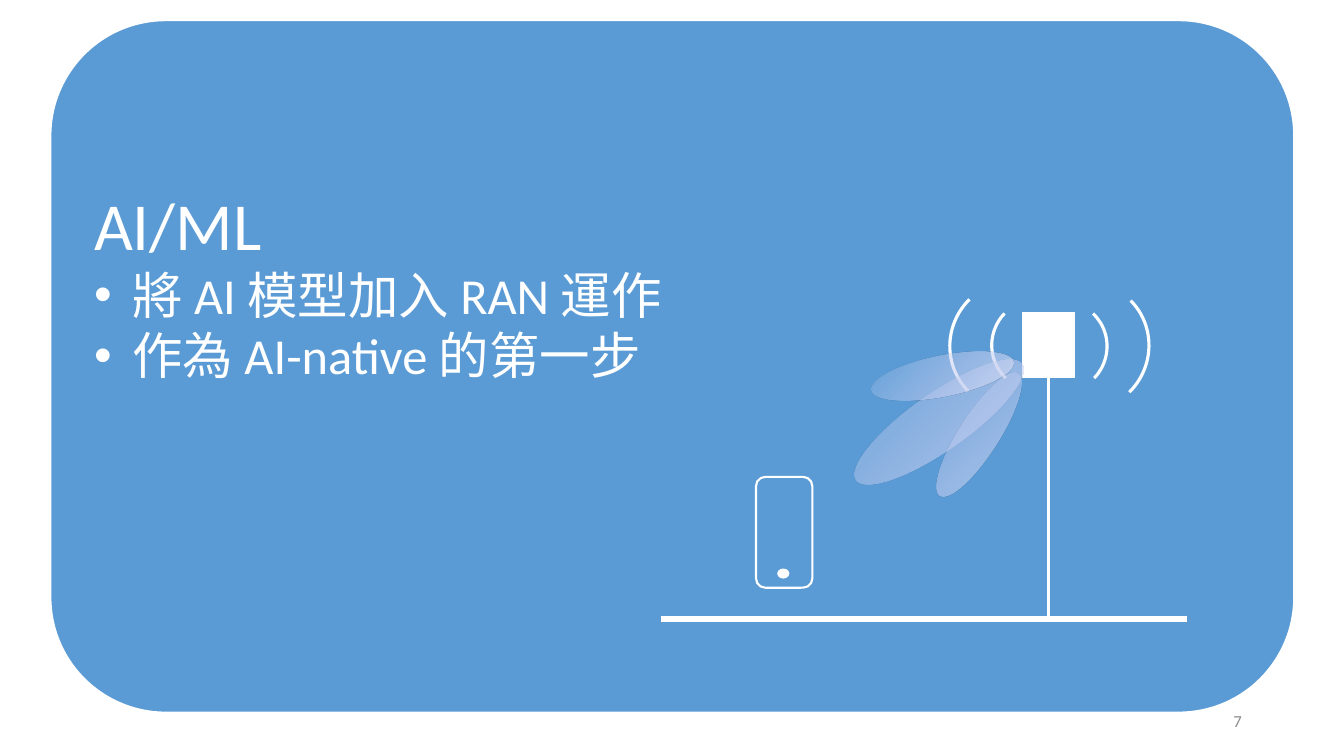
from lxml import etree
from pptx import Presentation
from pptx.dml.color import RGBColor
from pptx.enum.shapes import MSO_CONNECTOR as Connector, MSO_SHAPE as Preset
from pptx.enum.text import MSO_ANCHOR as Anchor, PP_ALIGN as Align
from pptx.oxml.ns import qn
from pptx.util import Inches, Pt

COLORS = {"panel": "5B9BD5", "white": "FFFFFF", "number": "8C8C8C"}
# position, colour and opacity, all positions and opacities in percent
BEAM_STOPS = [(0, "E0E5F7", 72), (47, "C0CBF0", 55), (98, "D0D8F4", 0)]


class Canvas:
    """Draws on one slide; lengths are percentages of its width and height."""

    font = "Calibri"

    def __init__(self, presentation):
        self.width = presentation.slide_width
        self.height = presentation.slide_height
        self.slide = presentation.slides.add_slide(presentation.slide_layouts[6])

    def x(self, share):
        return round(self.width * share / 100)

    def y(self, share):
        return round(self.height * share / 100)

    def box(self, left, top, width, height):
        return self.x(left), self.y(top), self.x(width), self.y(height)

    def shape(self, preset, box, fill=None, line_width=0, rotation=0):
        shape = self.slide.shapes.add_shape(preset, *self.box(*box))
        shape.shadow.inherit = False
        shape.rotation = rotation
        if fill:
            shape.fill.solid()
            shape.fill.fore_color.rgb = RGBColor.from_string(COLORS[fill])
        if line_width:
            shape.line.color.rgb = RGBColor.from_string(COLORS["white"])
            shape.line.width = Pt(line_width)
        else:
            shape.line.fill.background()
        return shape

    def line(self, start, end, width):
        line = self.slide.shapes.add_connector(
            Connector.STRAIGHT, self.x(start[0]), self.y(start[1]), self.x(end[0]), self.y(end[1]))
        line.line.color.rgb = RGBColor.from_string(COLORS["white"])
        line.line.width = Pt(width)
        etree.SubElement(line._element.spPr, qn("a:effectLst"))

    def text_box(self, box):
        frame = self.slide.shapes.add_textbox(*self.box(*box)).text_frame
        frame.word_wrap = True
        frame.vertical_anchor = Anchor.MIDDLE
        return frame

    def run(self, paragraph, text, size, color="white", align=Align.LEFT):
        paragraph.alignment = align
        run = paragraph.add_run()
        run.text = text
        run.font.name = self.font
        run.font.size = Pt(size)
        run.font.color.rgb = RGBColor.from_string(COLORS[color])

    def bullet(self, paragraph, text, size):
        self.run(paragraph, text, size)
        properties = paragraph._p.get_or_add_pPr()
        indent = Inches(0.38)
        properties.set("marL", str(indent))
        properties.set("indent", str(-indent))
        etree.SubElement(properties, qn("a:buFont"), typeface="Arial")
        etree.SubElement(properties, qn("a:buChar"), char="•")

    def beam(self, box, rotation):
        """Add an ellipse that fades out from its lower right corner."""
        shape = self.shape(Preset.OVAL, box, rotation=rotation)
        gradient = etree.Element(qn("a:gradFill"), rotWithShape="1")
        stops = etree.SubElement(gradient, qn("a:gsLst"))
        for position, color, opacity in BEAM_STOPS:
            stop = etree.SubElement(stops, qn("a:gs"), pos=str(position * 1000))
            rgb = etree.SubElement(stop, qn("a:srgbClr"), val=color)
            etree.SubElement(rgb, qn("a:alpha"), val=str(opacity * 1000))
        circle = etree.SubElement(gradient, qn("a:path"), path="circle")
        etree.SubElement(circle, qn("a:fillToRect"), l="100000", t="100000")
        shape._element.spPr.find(qn("a:prstGeom")).addnext(gradient)

    def signal(self, center_x, center_y, side, rotation):
        """Add the outer and inner wave on one side (1 right, -1 left)."""
        for offset, width, height, turn in ((2.59, 9.53, 17.33, 1.5), (0.9, 6.75, 12.13, 0)):
            left = center_x + side * offset - width / 2
            self.shape(Preset.ARC, (left, center_y - height / 2, width, height),
                       "panel", 2.25, rotation + turn)


def main():
    presentation = Presentation()
    presentation.slide_width = Inches(13.33)
    presentation.slide_height = Inches(7.5)
    canvas = Canvas(presentation)

    number = canvas.text_box((70.65, 92.67, 22.5, 5.33))
    canvas.run(number.paragraphs[0], "7", 12, "number", Align.RIGHT)

    panel = canvas.shape(Preset.ROUNDED_RECTANGLE, (3.75, 2.67, 92.55, 91.6), "panel", 1.5)
    frame = panel.text_frame
    frame.word_wrap = True
    frame.vertical_anchor = Anchor.MIDDLE
    frame.margin_bottom = canvas.y(22.4)
    canvas.run(frame.paragraphs[0], "AI/ML", 48)
    for text in ("將 AI 模型加入 RAN 運作", "作為 AI-native 的第一步"):
        canvas.bullet(frame.add_paragraph(), text, 36)

    ground, mast = 81.87, 78
    canvas.line((49.2, ground), (88.35, ground), 4.5)
    canvas.line((mast, 50), (mast, ground), 2.25)
    canvas.shape(Preset.ROUNDED_RECTANGLE, (56.25, 63.07, 4.2, 14.67), "panel", 1.5)
    canvas.signal(mast + 0.08, 45.87, 1, 43.7)
    canvas.signal(mast + 0.08, 45.6, -1, 223.7)
    canvas.shape(Preset.RECTANGLE, (76.05, 41.33, 3.9, 8.67), "white", 0.75)
    canvas.shape(Preset.OVAL, (57.83, 75.2, 0.9, 1.33), "white")

    for box, rotation in (
        ((62.33, 52, 15.08, 7.6), 325.1),
        ((64.73, 47.07, 10.8, 5.33), 349.1),
        ((67.43, 54.8, 10.8, 5.33), 302.4),
    ):
        canvas.beam(box, rotation)

    presentation.save("out.pptx")


if __name__ == "__main__":
    main()
